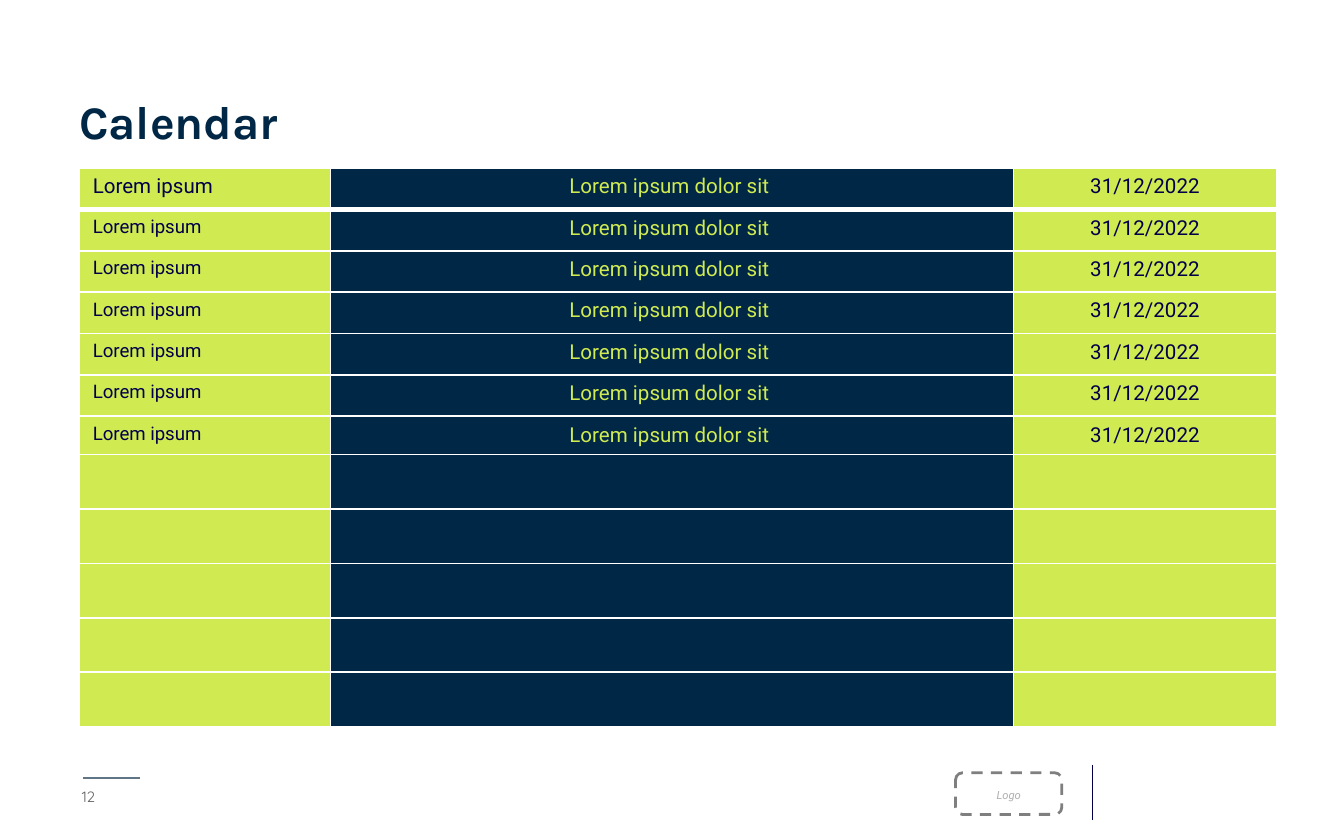
import pptx
import pptx.util
import pptx.dml.color
import pptx.enum.dml
import pptx.enum.shapes
import pptx.enum.text
import pptx.oxml
import pptx.oxml.ns
import lxml.etree

Pt = pptx.util.Pt
RGB = pptx.dml.color.RGBColor.from_string
qn = pptx.oxml.ns.qn
ALIGN = pptx.enum.text.PP_ALIGN
SHAPE = pptx.enum.shapes.MSO_SHAPE

theme = {
    "lime": "D0EB52", "navy": "002745", "ink": "020048", "white": "FFFFFF",
    "slate": "607687", "dash": "7F7F7F",
    "title": ({"name": "Karla", "size": Pt(25), "bold": True}, "002745"),
    "page": ({"name": "Quicksand", "size": Pt(8)}, "626262"),
    "logo": ({"name": "Roboto", "size": Pt(6), "italic": True}, "B0B0B0"),
    "head": ({"name": "Roboto", "size": Pt(11)}, "020048"),
    "name": ({"name": "Roboto", "size": Pt(10)}, "020048"),
    "task": ({"name": "Roboto", "size": Pt(11)}, "D0EB52"),
    "date": ({"name": "Roboto", "size": Pt(11)}, "020048"),
}

deck = pptx.Presentation()
deck.slide_width = pptx.util.Inches(10)
deck.slide_height = pptx.util.Inches(6.25)
slide = deck.slides.add_slide(deck.slide_layouts[6])
unit_x = deck.slide_width / 100
unit_y = deck.slide_height / 100


def place(x, y, w, h):
    return [round(n) for n in (x * unit_x, y * unit_y, w * unit_x, h * unit_y)]


def write(frame, text, style, align):
    para = frame.paragraphs[0]
    para.alignment = align
    run = para.add_run()
    run.text = text
    form, color = theme[style]
    for key, value in form.items():
        setattr(run.font, key, value)
    run.font.color.rgb = RGB(color)


for x1, y1, x2, y2, color in (
    (6.2, 92.64, 10.4, 92.64, "slate"),
    (81.3, 91.04, 81.3, 97.6, "ink"),
):
    rule = slide.shapes.add_connector(
        pptx.enum.shapes.MSO_CONNECTOR.STRAIGHT, *place(x1, y1, x2, y2))
    rule.line.color.rgb = RGB(theme[color])
    rule.line.width = Pt(0.75)
    lxml.etree.SubElement(rule._element.spPr, qn("a:effectLst"))

logo = slide.shapes.add_shape(SHAPE.ROUNDED_RECTANGLE, *place(71.1, 92, 7.9, 4.96))
logo.shadow.inherit = False
logo.fill.background()
logo.line.color.rgb = RGB(theme["dash"])
logo.line.width = Pt(1.5)
logo.line.dash_style = pptx.enum.dml.MSO_LINE.DASH

for text, style, align, spot, pad in (
    ("12", "page", ALIGN.LEFT, (5.1, 92.96, 4.2, 3.84), 0.8),
    ("Logo", "logo", ALIGN.CENTER, (71.1, 93.12, 7.9, 3.2), 0.8),
    ("Calendar", "title", ALIGN.LEFT, (4.9, 9.44, 33.1, 13.6), 1.6),
):
    frame = slide.shapes.add_textbox(*place(*spot)).text_frame
    frame.word_wrap = True
    frame.margin_top = frame.margin_bottom = round(pad * unit_y)
    write(frame, text, style, align)

widths = [18.7, 50.8, 19.6]
heights = [4.93] * 6 + [4.56] + [6.48] * 5
filled = 7
columns = (
    ("Lorem ipsum", "name", ALIGN.LEFT, "lime"),
    ("Lorem ipsum dolor sit ", "task", ALIGN.CENTER, "navy"),
    ("31/12/2022", "date", ALIGN.CENTER, "lime"),
)
grid = slide.shapes.add_table(
    len(heights), len(widths), *place(5.9, 20, sum(widths), sum(heights))).table
grid.first_row = False
grid.horz_banding = False
for col, width in zip(grid.columns, widths):
    col.width = round(width * unit_x)

for r, height in enumerate(heights):
    grid.rows[r].height = round(height * unit_y)
    for c, (text, style, align, fill) in enumerate(columns):
        cell = grid.cell(r, c)
        cell.fill.solid()
        cell.fill.fore_color.rgb = RGB(theme[fill])
        if r < filled:
            write(cell.text_frame, text, "head" if r == c == 0 else style, align)
        for i, side in enumerate("LRTB"):
            thick = (r, side) in ((0, "B"), (1, "T"))
            edge = lxml.etree.Element(qn("a:ln" + side), w=str(Pt(3 if thick else 1)))
            paint = lxml.etree.SubElement(edge, qn("a:solidFill"))
            lxml.etree.SubElement(paint, qn("a:srgbClr"), val=theme["white"])
            cell._tc.get_or_add_tcPr().insert(i, edge)

deck.save("out.pptx")
